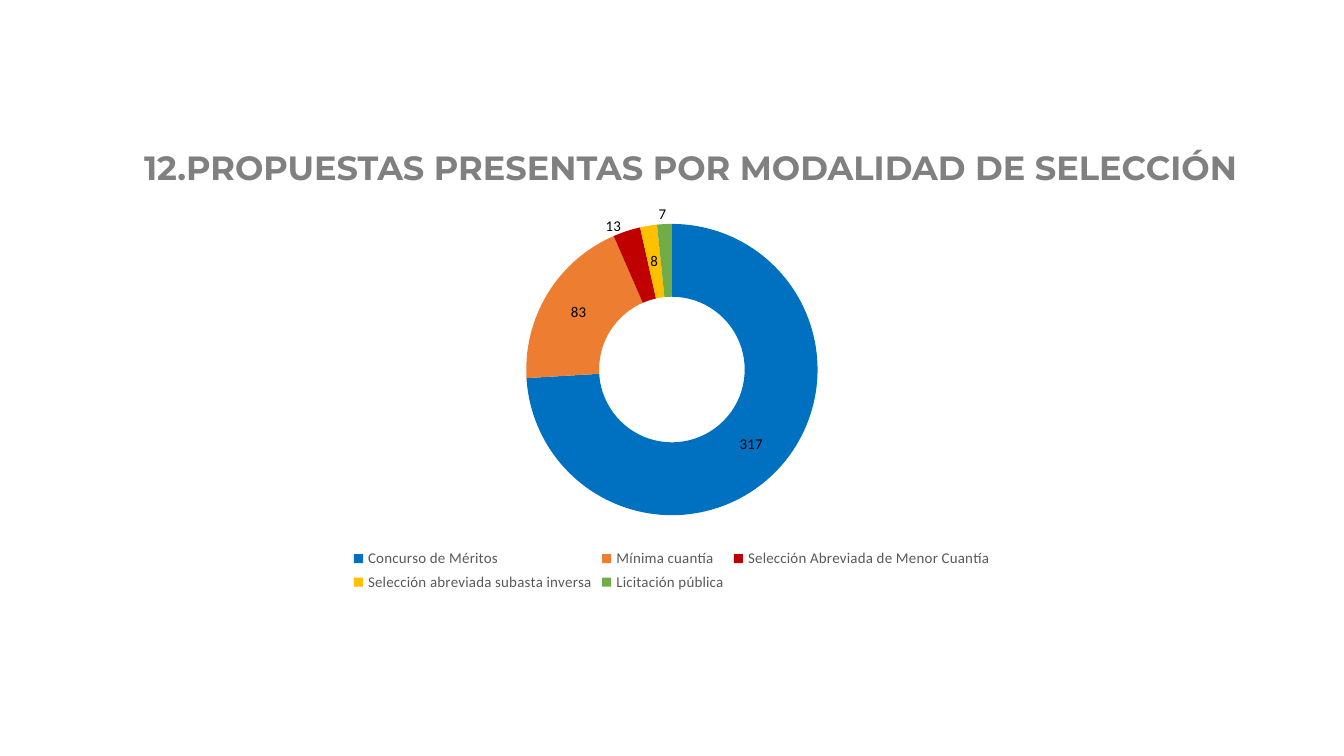
from dataclasses import dataclass

from lxml import etree
from pptx import Presentation
from pptx.chart.data import CategoryChartData
from pptx.dml.color import RGBColor
from pptx.enum.chart import XL_CHART_TYPE, XL_LEGEND_POSITION
from pptx.enum.text import MSO_ANCHOR, MSO_AUTO_SIZE, PP_ALIGN
from pptx.oxml.ns import qn
from pptx.util import Inches, Pt

DOUGHNUT = XL_CHART_TYPE.DOUGHNUT
BOTTOM = XL_LEGEND_POSITION.BOTTOM
MIDDLE = MSO_ANCHOR.MIDDLE
GROW = MSO_AUTO_SIZE.SHAPE_TO_FIT_TEXT
CENTER = PP_ALIGN.CENTER

WIDTH = Inches(10)
HEIGHT = WIDTH * 9 // 16
GRID_UNIT = WIDTH // 100
COLORS = {
    "title": "808080", "label": "000000", "legend": "595959",
    "blue": "0070C0", "orange": "ED7D31", "red": "C00000",
    "yellow": "FFC000", "green": "70AD47",
}


@dataclass(frozen=True)
class Area:
    """Grid units on the slide, or percentages within the chart."""
    left: float
    top: float
    width: float
    height: float

    def scaled(self, unit: float) -> tuple[float, ...]:
        return tuple(side * unit for side in
                     (self.left, self.top, self.width, self.height))

    def on_slide(self) -> tuple[int, ...]:
        return tuple(round(side) for side in self.scaled(GRID_UNIT))


@dataclass(frozen=True)
class Modality:
    """A slice; its label shift is in percentages of the chart."""
    name: str
    proposals: int
    color: str
    label_shift: tuple[float, float] | None = None


TITLE_AREA = Area(9.1, 10.8, 84.6, 3.7)
CHART_AREA = Area(14.7, 15.3, 70.6, 29.1)
RING_AREA = Area(34.6, 4.7, 30.8, 74.5)

MODALITIES = [
    Modality("Concurso de Méritos", 317, "blue"),
    Modality("Mínima cuantía", 83, "orange"),
    Modality("Selección Abreviada de Menor Cuantía", 13, "red", (-2.6, -9.9)),
    Modality("Selección abreviada subasta inversa", 8, "yellow"),
    Modality("Licitación pública", 7, "green", (-0.4, -12)),
]


def rgb(name: str) -> RGBColor:
    return RGBColor.from_string(COLORS[name])


def style_font(font, *, size: float, color: str, name: str, bold: bool = False) -> None:
    font.size, font.name, font.bold = Pt(size), name, bold
    font.color.rgb = rgb(color)


def add_text(slide, text: str, area: Area, *, align=CENTER,
             line_spacing: float = 1.0, **font_format) -> None:
    frame = slide.shapes.add_textbox(*area.on_slide()).text_frame
    frame.word_wrap = False
    frame.auto_size = GROW
    frame.vertical_anchor = MIDDLE
    paragraph = frame.paragraphs[0]
    paragraph.alignment = align
    paragraph.line_spacing = line_spacing
    run = paragraph.add_run()
    run.text = text
    style_font(run.font, **font_format)


def manual_layout(**settings) -> etree._Element:
    """Build a chart layout element from its settings, given in schema order."""
    layout = etree.Element(qn("c:layout"))
    manual = etree.SubElement(layout, qn("c:manualLayout"))
    for tag, value in settings.items():
        etree.SubElement(manual, qn(f"c:{tag}")).set("val", str(value))
    return layout


def place_ring(chart, area: Area) -> None:
    plot_area = chart.plots[0]._element.getparent()
    for old in plot_area.findall(qn("c:layout")):
        plot_area.remove(old)
    left, top, width, height = area.scaled(0.01)
    plot_area.insert(0, manual_layout(
        layoutTarget="inner", xMode="edge", yMode="edge",
        x=left, y=top, w=width, h=height))


def shift_label(series, index: int, shift: tuple[float, float]) -> None:
    """Move one data label away from its slice."""
    style_font(series.points[index].data_label.font,
               size=8, color="label", name="Calibri")
    label_index = series._element.xpath(f"c:dLbls/c:dLbl/c:idx[@val='{index}']")[0]
    label_index.addnext(manual_layout(x=shift[0] / 100, y=shift[1] / 100))


def add_doughnut(slide, modalities: list[Modality], area: Area) -> None:
    data = CategoryChartData()
    data.categories = [modality.name for modality in modalities]
    data.add_series("Series 1", [modality.proposals for modality in modalities])
    chart = slide.shapes.add_chart(DOUGHNUT, *area.on_slide(), data).chart
    chart.has_title = False
    style_font(chart.font, size=10, color="label", name="Calibri")
    place_ring(chart, RING_AREA)

    chart.has_legend = True
    chart.legend.position = BOTTOM
    chart.legend.include_in_layout = False
    style_font(chart.legend.font, size=8, color="legend", name="Calibri")

    plot = chart.plots[0]
    plot.vary_by_categories = True
    series = plot.series[0]
    series.data_labels.show_value = True
    style_font(series.data_labels.font, size=8, color="label", name="Calibri")
    for index, modality in enumerate(modalities):
        slice_format = series.points[index].format
        slice_format.fill.solid()
        slice_format.fill.fore_color.rgb = rgb(modality.color)
        slice_format.line.fill.background()
        if modality.label_shift:
            shift_label(series, index, modality.label_shift)


def main() -> None:
    deck = Presentation()
    deck.slide_width, deck.slide_height = WIDTH, HEIGHT
    slide = deck.slides.add_slide(deck.slide_layouts[6])
    add_doughnut(slide, MODALITIES, CHART_AREA)
    add_text(slide, "12.PROPUESTAS PRESENTAS POR MODALIDAD DE SELECCIÓN", TITLE_AREA,
             line_spacing=0.9, size=18, color="title", name="Montserrat", bold=True)
    deck.save("out.pptx")


if __name__ == "__main__":
    main()
